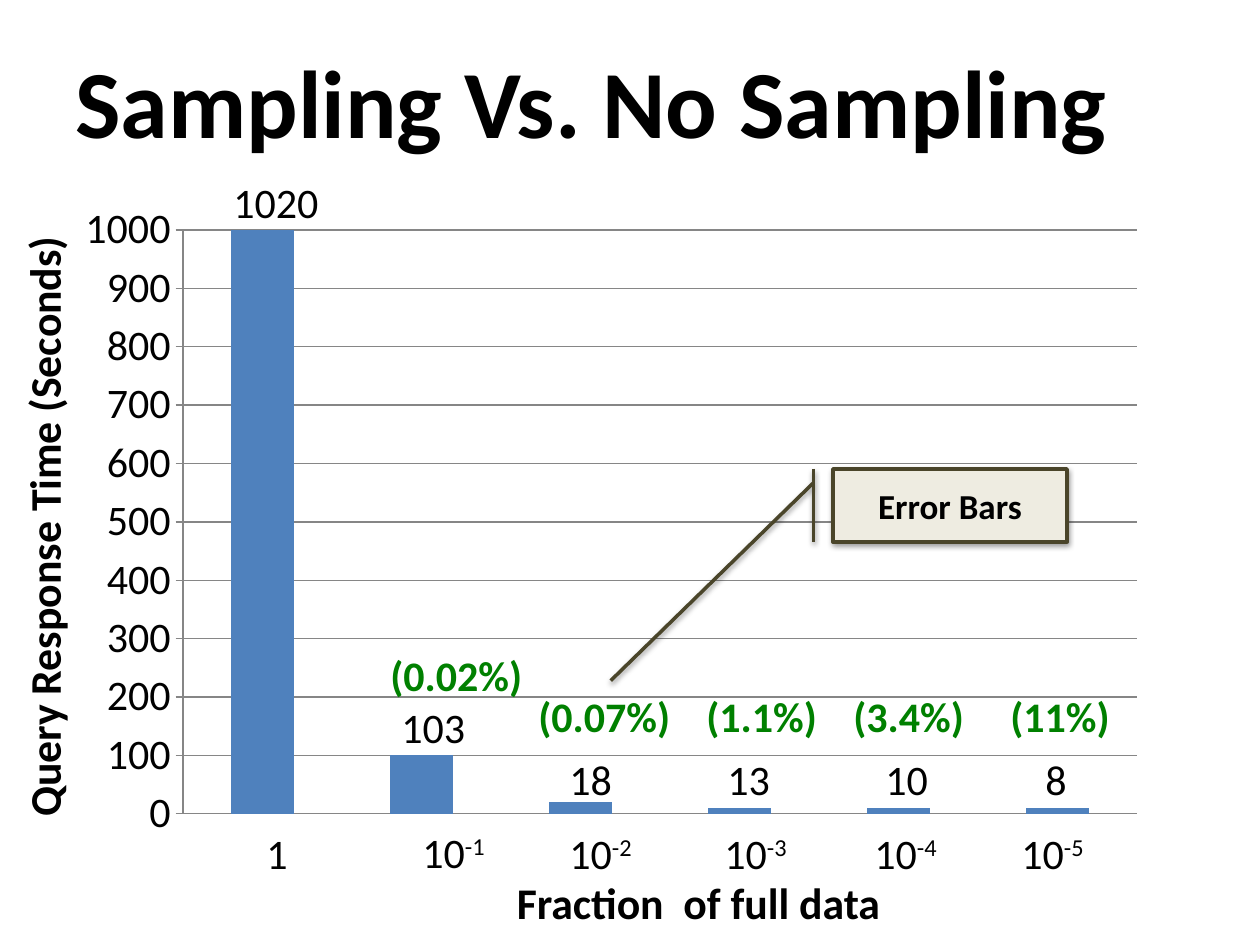
from lxml.etree import SubElement
from pptx import Presentation
from pptx.chart.data import CategoryChartData
from pptx.dml.color import RGBColor
from pptx.enum.chart import XL_CHART_TYPE, XL_TICK_LABEL_POSITION, XL_TICK_MARK
from pptx.enum.shapes import MSO_SHAPE
from pptx.enum.text import MSO_ANCHOR, PP_ALIGN
from pptx.oxml import parse_xml
from pptx.oxml.ns import nsdecls, qn
from pptx.util import Pt

SCALE = 914400 / 126
FONT = "Calibri"
COLORS = {"text": "000000", "bar": "4F81BD", "grid": "868686",
          "error": "008000", "note": "EEECE1", "edge": "4A452A"}


def px(*vals):
    return [round(v * SCALE) for v in vals]


def write(text, box=None, shape=None, size=24, bold=False, color="text",
          align=PP_ALIGN.LEFT, anchor=MSO_ANCHOR.TOP, wrap=False, sup=""):
    """Write into a given shape or a new text box; sup is raised after text."""
    shape = shape or slide.shapes.add_textbox(*px(*box))
    frame = shape.text_frame
    frame.word_wrap = wrap
    frame.vertical_anchor = anchor
    para = frame.paragraphs[0]
    para.alignment = align
    for part in filter(None, (text, sup)):
        run = para.add_run()
        run.text = part
        run.font.name = FONT
        run.font.size = Pt(size)
        run.font.bold = bold
        run.font.color.rgb = RGBColor.from_string(COLORS[color])
    if sup:
        run.font._element.set("baseline", "30000")
    return shape


prs = Presentation()
prs.slide_width, prs.slide_height = px(1260, 945)
slide = prs.slides.add_slide(prs.slide_layouts[6])

write("Sampling Vs. No Sampling", (63, 21, 1134, 158), size=55, bold=True,
      anchor=MSO_ANCHOR.MIDDLE, wrap=True)

# Column chart
data = CategoryChartData()
data.categories = [str(n) for n in range(1, 7)]
data.add_series("Series 1", [1020, 100, 20, 10, 10, 10])
left, top, width, height = 64, 192, 1095, 661
chart = slide.shapes.add_chart(XL_CHART_TYPE.COLUMN_STACKED,
                               *px(left, top, width, height), data).chart
chart.has_legend = False
chart.has_title = False
chart.font.name = FONT
chart.font.size = Pt(10)
chart.font.color.rgb = RGBColor.from_string(COLORS["text"])

plot = chart.plots[0]
plot.gap_width = 150
plot.overlap = 100
plot.vary_by_categories = False
fill = plot.series[0].format.fill
fill.solid()
fill.fore_color.rgb = RGBColor.from_string(COLORS["bar"])

cat, val = chart.category_axis, chart.value_axis
cat.tick_label_position = XL_TICK_LABEL_POSITION.NONE
cat.major_tick_mark = XL_TICK_MARK.NONE
val.minimum_scale, val.maximum_scale, val.major_unit = 0, 1000, 100
val.major_tick_mark = XL_TICK_MARK.OUTSIDE
val.tick_labels.font.size = Pt(24)
val.tick_labels.font.name = FONT
for item in (cat, val, val.major_gridlines):
    item.format.line.width = Pt(0.75)
    item.format.line.color.rgb = RGBColor.from_string(COLORS["grid"])

# Fix the inner plot area in the chart frame
area = chart._chartSpace.chart.plotArea
for old in area.findall(qn("c:layout")):
    area.remove(old)
layout = parse_xml(f"<c:layout {nsdecls('c')}><c:manualLayout/></c:layout>")
area.insert(0, layout)
for tag, value in (("layoutTarget", "inner"), ("xMode", "edge"),
                   ("yMode", "edge"), ("x", (183 - left) / width),
                   ("y", (230 - top) / height), ("w", 954 / width),
                   ("h", 584 / height)):
    SubElement(layout[0], qn(f"c:{tag}")).set("val", str(value))

# Axis captions
write("1", (254, 821, 47, 63))
for n, (x, y) in enumerate(((410, 820), (557, 821), (712, 821),
                            (862, 821), (1009, 821)), 1):
    write("10", (x, y, 92, 63), sup=f"-{n}")
write("Fraction  of full data", (449, 870, 499, 66), size=25, bold=True,
      align=PP_ALIGN.CENTER, wrap=True)
side = write("Query Response Time (Seconds)", (-262, 490, 612, 66),
             size=25, bold=True)
side.rotation = 270

# Times above the bars
for time, x, y, w in (("1020", 221, 170, 111), ("103", 389, 695, 90),
                      ("18", 557, 747, 68), ("13", 715, 747, 68),
                      ("10", 873, 747, 68), ("8", 1033, 747, 47)):
    write(time, (x, y, w, 63))

# Error rates
for rate, x, y, w in (("0.02", 378, 643, 159), ("0.07", 526, 684, 159),
                      ("1.1", 694, 684, 137), ("3.4", 841, 684, 137),
                      ("11", 998, 684, 126)):
    write(f"({rate}%)", (x, y, w, 63), bold=True, color="error")

# Callout
note = slide.shapes.add_shape(MSO_SHAPE.LINE_CALLOUT_1_BORDER_AND_ACCENT_BAR,
                              *px(833, 469, 234, 73))
for i, adj in enumerate((0.19, -1 / 12, 2.9, -0.95)):
    note.adjustments[i] = adj
note.fill.solid()
note.fill.fore_color.rgb = RGBColor.from_string(COLORS["note"])
note.line.color.rgb = RGBColor.from_string(COLORS["edge"])
note.line.width = Pt(2)
note.shadow.inherit = False
note._element.spPr.find(qn("a:effectLst")).append(parse_xml(
    f'<a:outerShdw {nsdecls("a")} blurRad="40000" dist="20000" dir="5400000"'
    ' rotWithShape="0"><a:srgbClr val="000000"><a:alpha val="38000"/>'
    '</a:srgbClr></a:outerShdw>'))
write("Error Bars", shape=note, size=20, bold=True, align=PP_ALIGN.CENTER,
      anchor=MSO_ANCHOR.MIDDLE, wrap=True)

prs.save("out.pptx")
